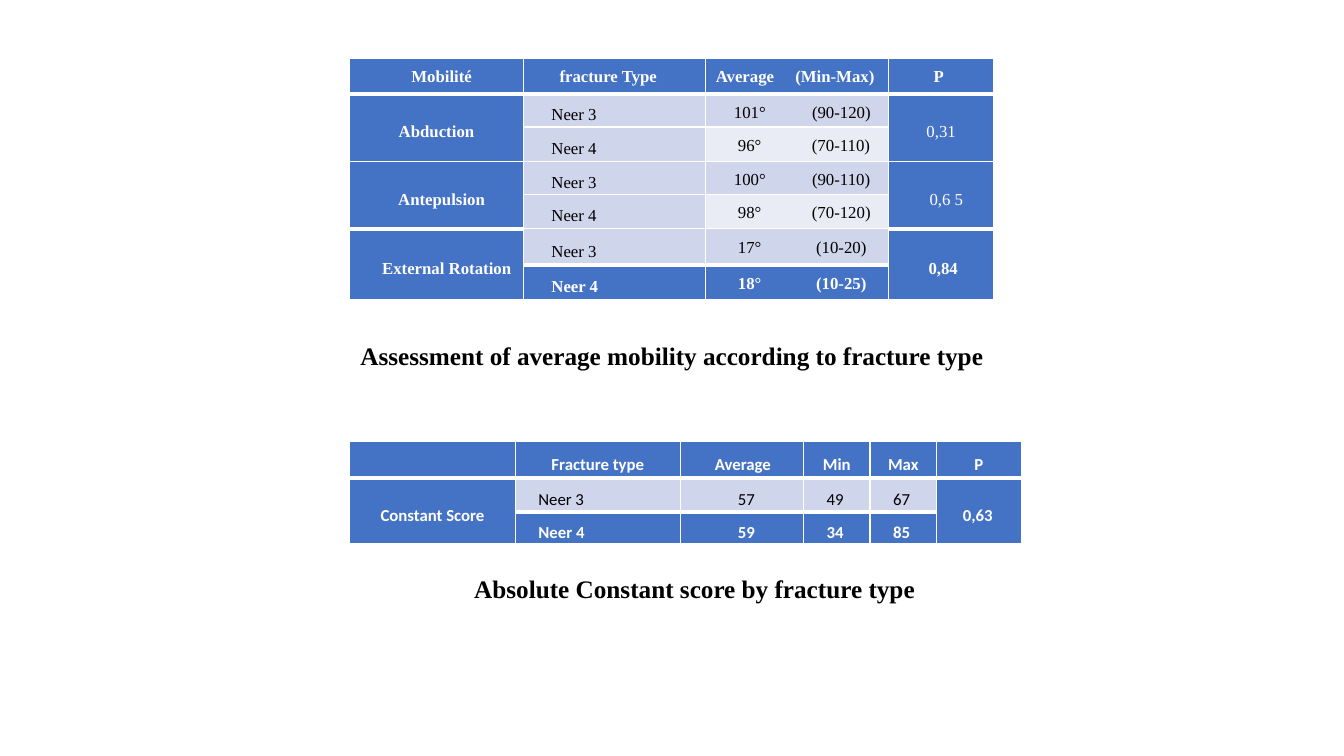
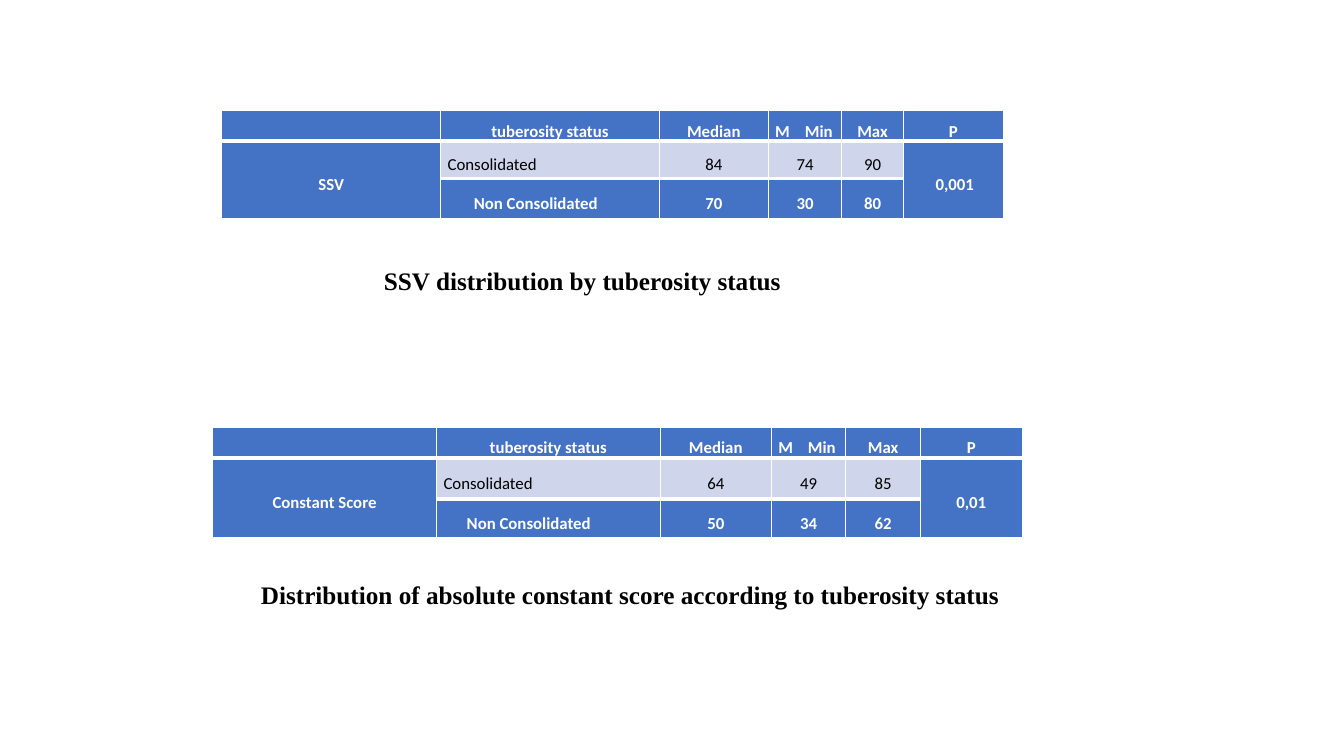
"""Build two slides of fracture result tables with their captions."""
from lxml import etree
from pptx import Presentation
from pptx.dml.color import RGBColor
from pptx.enum.text import MSO_ANCHOR, MSO_AUTO_SIZE, PP_ALIGN
from pptx.oxml.ns import qn
from pptx.util import Inches, Pt

TOP, MIDDLE = MSO_ANCHOR.TOP, MSO_ANCHOR.MIDDLE
LEFT, CENTER = PP_ALIGN.LEFT, PP_ALIGN.CENTER
GROW = MSO_AUTO_SIZE.SHAPE_TO_FIT_TEXT
COLORS = {"blue": "4472C4", "band": "CFD5EA", "pale": "E9EBF5",
          "white": "FFFFFF", "black": "000000"}
SERIF, SANS = "Times New Roman", "Calibri"


def style(para, font, size, color, bold):
    for run in para.runs:
        run.font.name = font
        run.font.size = Pt(size)
        run.font.bold = bold
        run.font.color.rgb = RGBColor.from_string(COLORS[color])


def border(cell, side, width):
    line = etree.SubElement(cell._tc.get_or_add_tcPr(), qn("a:ln" + side), w=str(Pt(width)))
    fill = etree.SubElement(line, qn("a:solidFill"))
    etree.SubElement(fill, qn("a:srgbClr"), val=COLORS["white"])


mobility = [
    [("Mobilité", 0.54), ("fracture Type", 0.29), ("Average (Min-Max)", 0.03, 12), ("P", 0.38)],
    ["Abduction", ("Neer 3", 0.21), ("101° (90-120)", 0.21, 30), "0,31"],
    ["", ("Neer 4", 0.21), ("96° (70-110)", 0.25, 33), ""],
    [("Antepulsion", 0.41), ("Neer 3", 0.21), ("100° (90-110)", 0.21, 30), ("0,6 5", 0.34)],
    ["", ("Neer 4", 0.21), ("98° (70-120)", 0.25, 33), ""],
    [("External Rotation", 0.25), ("Neer 3", 0.21), ("17° (10-20)", 0.25, 36), ("0,84", 0.33)],
    ["", ("Neer 4", 0.21), ("18° (10-25)", 0.25, 36), ""],
]
score = [
    ["", "Fracture type", ("Average", 0.27), "Min", "Max", "P"],
    ["Constant Score", ("Neer 3", 0.16), ("57", 0.5), ("49", 0.16), ("67", 0.16), ("0,63", 0.19)],
    ["", ("Neer 4", 0.16), ("59", 0.5), ("34", 0.16), ("85", 0.16), ""],
]
status = ["", "tuberosity status", "Median", ("M Min", 0, 8), "Max", "P"]
ssv = [
    status,
    ["SSV", ("Consolidated", 0), "84", "74", "90", ("0,001", 0.25)],
    ["", ("Non Consolidated", 0.26), "70", "30", "80", ""],
]
constant = [
    status,
    ["Constant Score", ("Consolidated", 0), "64", "49", "85", "0,01"],
    ["", ("Non Consolidated", 0.23), "50", "34", "62", ""],
]

slides = [
    {"tables": [
        (3.47, 0.58, [1.72, 1.81, 1.81, 1.05], [0.35, 0.33, 0.34, 0.33, 0.34, 0.36, 0.34],
         SERIF, 2, mobility),
        (3.47, 4.38, [1.64, 1.64, 1.22, 0.66, 0.66, 0.84], [0.36, 0.34, 0.31],
         SANS, None, score)],
     "captions": [
        (3.33, 3.18, 6.67, 0.5, CENTER, 1.5,
         "Assessment of average mobility according to fracture type"),
        (3.47, 5.64, 6.84, 0.4, CENTER, 1, "Absolute Constant score by fracture type")]},
    {"tables": [
        (2.2, 1.1, [2.17, 2.17, 1.08, 0.73, 0.61, 0.99], [0.3, 0.37, 0.4],
         SANS, None, ssv),
        (2.11, 4.24, [2.22, 2.22, 1.1, 0.74, 0.74, 1.01], [0.3, 0.41, 0.38],
         SANS, None, constant)],
     "captions": [
        (3.71, 2.58, 8.36, 0.4, LEFT, 1, "SSV distribution by tuberosity status"),
        (2.49, 5.7, 8.36, 0.4, LEFT, 1,
         "Distribution of absolute constant score according to tuberosity status")]},
]

deck = Presentation()
deck.slide_width, deck.slide_height = Inches(13.33), Inches(7.5)

for page in slides:
    slide = deck.slides.add_slide(deck.slide_layouts[6])
    for left, top, widths, heights, font, span, rows in page["tables"]:
        last, end = len(rows) - 1, len(widths) - 1
        table = slide.shapes.add_table(
            len(rows), len(widths), Inches(left), Inches(top),
            Inches(sum(widths)), Inches(sum(heights))).table
        for col, width in zip(table.columns, widths):
            col.width = Inches(width)
        for row, height in zip(table.rows, heights):
            row.height = Inches(height)
        thick = {(1, c) for c in range(end + 1)}
        thick |= {(last, c) for c in range(1, end)} | {(last - 1, 0), (last - 1, end)}
        for r, row in enumerate(rows):
            for c, entry in enumerate(row):
                cell = table.cell(r, c)
                edge = c in (0, end)
                first = edge and r % 2 == 1
                if first:
                    cell.merge(table.cell(r + 1, c))
                below = r + 2 if first else r + 1
                border(cell, "L", 1)
                border(cell, "R", 1)
                border(cell, "T", 3 if (r, c) in thick else 1)
                border(cell, "B", 3 if (below, c) in thick else 1)
                dark = edge or r in (0, last)
                tone = "blue" if dark else "pale" if c == span and r % 2 == 0 else "band"
                cell.fill.solid()
                cell.fill.fore_color.rgb = RGBColor.from_string(COLORS[tone])
                cell.margin_left = cell.margin_right = Inches(0.07)
                cell.margin_top = cell.margin_bottom = 0
                cell.vertical_anchor = TOP if span and (r == 0 or c == span) else MIDDLE
                if not entry:
                    continue
                plain = isinstance(entry, str)
                text, indent, *gaps = (entry, 0) if plain else entry
                para = cell.text_frame.paragraphs[0]
                para.text = text
                para.alignment = CENTER if plain else LEFT
                para.line_spacing = 1.5
                para.space_before = Pt(6)
                para._p.get_or_add_pPr().set("indent", str(Inches(indent)))
                for gap in gaps:
                    head, tail = text.split(" ")
                    para.text = head
                    space, rest = para.add_run(), para.add_run()
                    space.text, rest.text = " ", tail
                    space._r.get_or_add_rPr().set("spc", str(gap * 100))
                light = c == end and 0 < r < last - 1
                style(para, font, 12, "white" if dark else "black", dark and not light)
    for left, top, width, height, align, space, text in page["captions"]:
        box = slide.shapes.add_textbox(Inches(left), Inches(top), Inches(width), Inches(height))
        frame = box.text_frame
        frame.word_wrap = True
        frame.auto_size = GROW
        para = frame.paragraphs[0]
        para.text = text
        para.alignment = align
        para.line_spacing = space
        if space > 1:
            para.space_before = para.space_after = Pt(6)
        style(para, SERIF, 18, "black", True)

deck.save("out.pptx")
